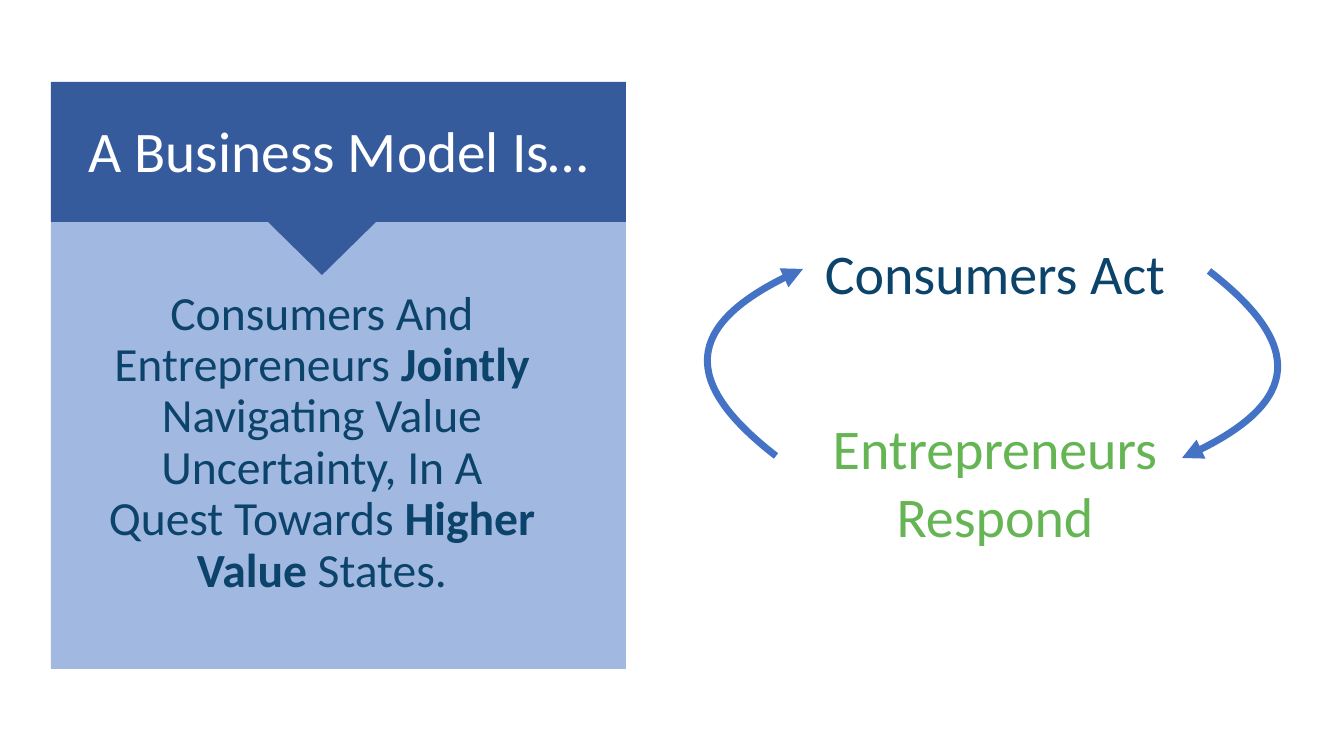
from dataclasses import dataclass

from lxml import etree
from pptx import Presentation
from pptx.dml.color import RGBColor
from pptx.enum.shapes import MSO_SHAPE
from pptx.enum.text import MSO_ANCHOR, MSO_AUTO_SIZE, PP_ALIGN
from pptx.oxml.ns import qn
from pptx.util import Pt

PX = 914400 / 100.8
RECTANGLE = MSO_SHAPE.RECTANGLE
CENTER = PP_ALIGN.CENTER
TOP = MSO_ANCHOR.TOP
GROW = MSO_AUTO_SIZE.SHAPE_TO_FIT_TEXT


@dataclass(frozen=True)
class Theme:
    font: str = "Calibri"
    banner: str = "365B9D"
    panel: str = "A1B8E1"
    navy: str = "0C436B"
    green: str = "65B554"
    white: str = "FFFFFF"
    arrow: str = "4472C4"
    title_size: int = 41
    body_size: int = 34
    label_size: int = 40
    arrow_width: int = 5


THEME = Theme()


def emu(px):
    return round(px * PX)


def rgb(value):
    return RGBColor.from_string(value)


def paint(shape, color):
    shape.shadow.inherit = False
    shape.fill.solid()
    shape.fill.fore_color.rgb = rgb(color)
    shape.line.fill.background()


def write(shape, box, spans, size, color, spacing=1.0):
    shape.left, shape.top, shape.width, shape.height = map(emu, box)
    frame = shape.text_frame
    frame.word_wrap = True
    frame.auto_size = GROW
    frame.vertical_anchor = TOP
    frame.margin_left = frame.margin_right = emu(5)
    frame.margin_top = frame.margin_bottom = emu(5)
    para = frame.paragraphs[0]
    para.alignment = CENTER
    para.line_spacing = spacing
    for text, bold in spans:
        span = para.add_run()
        span.text = text
        span.font.name = THEME.font
        span.font.size = Pt(size)
        span.font.bold = bold
        span.font.color.rgb = rgb(color)


def add_text(page, box, spans, size, color, spacing=1.0):
    shape = page.shapes.add_textbox(0, 0, 0, 0)
    write(shape, box, spans, size, color, spacing)


def add_panel(page, box):
    left, top, width, height = box
    panel = page.shapes.add_shape(RECTANGLE, *map(emu, box))
    paint(panel, THEME.panel)
    spans = [
        ("Consumers And Entrepreneurs ", False),
        ("Jointly", True),
        (" Navigating Value Uncertainty, In A Quest Towards ", False),
        ("Higher Value", True),
        (" States.", False),
    ]
    text_box = (left + 50, top + 62, 442, 336)
    add_text(page, text_box, spans, THEME.body_size, THEME.navy, 0.9)


def add_banner(page, box):
    left, top, width, height = box
    right, bottom = left + width, top + height
    notch, half, depth = left + 271, 54, 53
    builder = page.shapes.build_freeform(left, top, scale=PX)
    builder.add_line_segments([
        (left, bottom),
        (notch - half, bottom),
        (notch, bottom + depth),
        (notch + half, bottom),
        (right, bottom),
        (right, top),
    ])
    paint(builder.convert_to_shape(), THEME.banner)
    title = page.shapes.title
    title.element.getparent().append(title.element)
    title_box = (left + 28, top + 36, 520, 68)
    spans = [("A Business Model Is…", False)]
    write(title, title_box, spans, THEME.title_size, THEME.white, 0.9)


def add_curved_arrow(page, start, side):
    def place(across, down):
        return start[0] + side * across, start[1] + side * down

    handles = [place(97, 75), place(88, 137), place(-27, 187)]
    builder = page.shapes.build_freeform(*start, scale=PX)
    builder.add_line_segments([place(67, 95), handles[-1]], close=False)
    arrow = builder.convert_to_shape()
    arrow.shadow.inherit = False
    arrow.fill.background()
    arrow.line.color.rgb = rgb(THEME.arrow)
    arrow.line.width = Pt(THEME.arrow_width)

    outline = next(arrow.element.iter(qn("a:path")))
    outline.set("fill", "none")
    for segment in outline.findall(qn("a:lnTo")):
        outline.remove(segment)
    curve = etree.SubElement(outline, qn("a:cubicBezTo"))
    for x, y in handles:
        point = etree.SubElement(curve, qn("a:pt"))
        point.set("x", str(round(x - arrow.left / PX)))
        point.set("y", str(round(y - arrow.top / PX)))
    line = next(arrow.element.iter(qn("a:ln")))
    etree.SubElement(line, qn("a:tailEnd"), type="triangle")


def add_cycle(page, box):
    left, top, width, height = box
    respond_box = (left + 87, top + 175, 396, 135)
    act_box = (left + 98, top, 374, 67)
    respond = [("Entrepreneurs Respond", False)]
    act = [("Consumers Act", False)]
    add_text(page, respond_box, respond, THEME.label_size, THEME.green)
    add_curved_arrow(page, (left + 66, top + 222), -1)
    add_text(page, act_box, act, THEME.label_size, THEME.navy)
    add_curved_arrow(page, (left + width - 66, top + 37), 1)


def main():
    deck = Presentation()
    deck.slide_width, deck.slide_height = emu(1344), emu(756)
    page = deck.slides.add_slide(deck.slide_layouts.get_by_name("Title Only"))
    add_panel(page, (51, 222, 575, 447))
    add_banner(page, (51, 82, 575, 140))
    add_cycle(page, (710, 234, 565, 310))
    deck.save("out.pptx")


if __name__ == "__main__":
    main()
